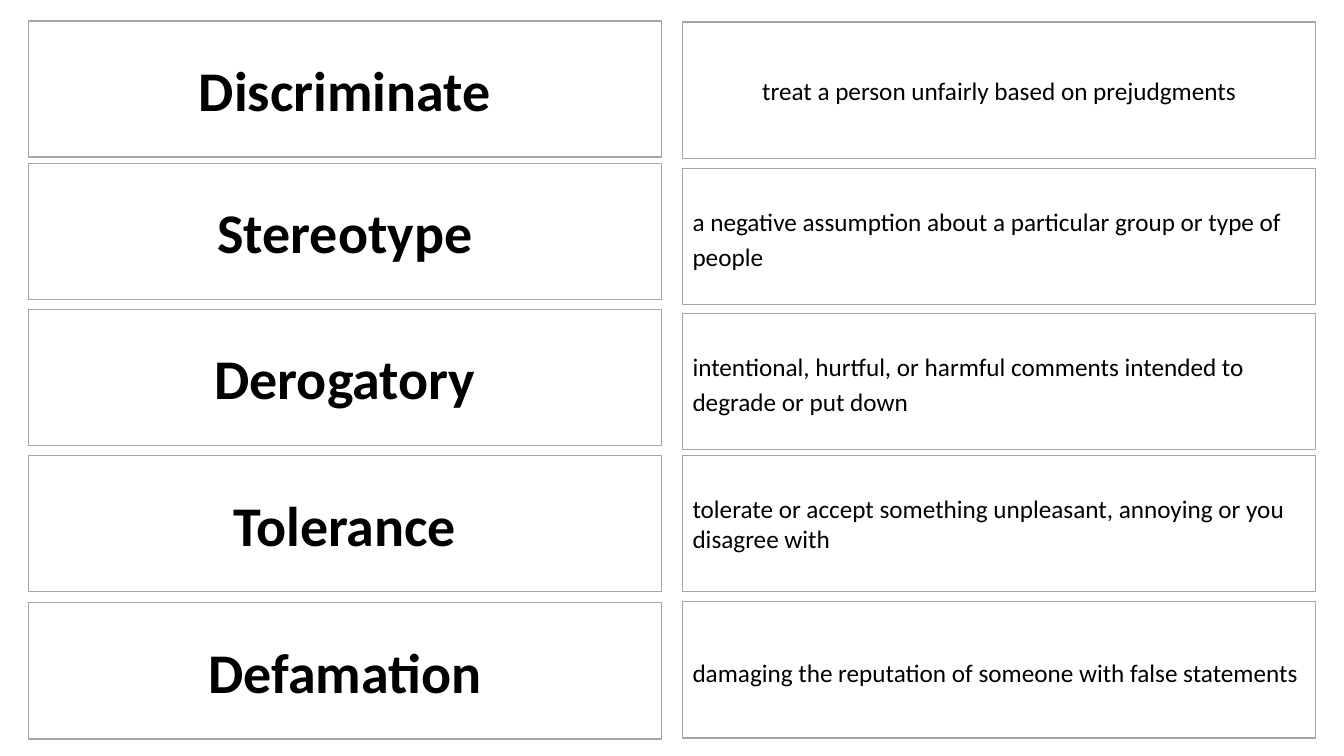
from dataclasses import dataclass

import pptx
import pptx.dml.color
import pptx.enum.shapes
import pptx.enum.text
import pptx.shapes.autoshape
import pptx.slide
import pptx.util

EMU_PER_PX = 9144  # 100 px to the inch
SLIDE_WIDTH, SLIDE_HEIGHT = 1333, 750
CARD_WIDTH, CARD_HEIGHT = 628, 135
TERM_LEFT, DEFINITION_LEFT = 28, 677
FONT_NAME = "Calibri"

CENTER = pptx.enum.text.PP_ALIGN.CENTER
LEFT = pptx.enum.text.PP_ALIGN.LEFT


@dataclass(frozen=True)
class Entry:
    term: str
    term_top: int
    definition: str
    definition_top: int
    definition_align: pptx.enum.text.PP_ALIGN = LEFT
    definition_spacing: float = 1.0


ENTRIES = [
    Entry("Discriminate", 21,
          "treat a person unfairly based on prejudgments", 22,
          definition_align=CENTER),
    Entry("Stereotype", 162,
          "a negative assumption about a particular group or type of people", 167,
          definition_spacing=1.15),
    Entry("Derogatory", 307,
          "intentional, hurtful, or harmful comments intended to degrade or put down", 311,
          definition_spacing=1.15),
    Entry("Tolerance", 452,
          "tolerate or accept something unpleasant, annoying or you disagree with", 452),
    Entry("Defamation", 598,
          "damaging the reputation of someone with false statements", 597,
          definition_spacing=1.15),
]


def px(length: int) -> pptx.util.Emu:
    return pptx.util.Emu(length * EMU_PER_PX)


def color(value: str) -> pptx.dml.color.RGBColor:
    return pptx.dml.color.RGBColor.from_string(value)


def write_text(shape: pptx.shapes.autoshape.Shape, text: str, *, size: int,
               bold: bool = False, align: pptx.enum.text.PP_ALIGN = LEFT,
               spacing: float = 1.0) -> None:
    frame = shape.text_frame
    frame.word_wrap = True
    frame.vertical_anchor = pptx.enum.text.MSO_ANCHOR.MIDDLE
    paragraph = frame.paragraphs[0]
    paragraph.alignment = align
    paragraph.line_spacing = spacing
    run = paragraph.add_run()
    run.text = text
    run.font.name = FONT_NAME
    run.font.size = pptx.util.Pt(size)
    run.font.bold = bold
    run.font.color.rgb = color("000000")


def add_card(slide: pptx.slide.Slide, left: int, top: int) -> pptx.shapes.autoshape.Shape:
    card = slide.shapes.add_shape(
        pptx.enum.shapes.MSO_SHAPE.RECTANGLE,
        px(left), px(top), px(CARD_WIDTH), px(CARD_HEIGHT))
    card.shadow.inherit = False
    card.fill.solid()
    card.fill.fore_color.rgb = color("FFFFFF")
    card.line.color.rgb = color("A5A5A5")
    card.line.width = pptx.util.Pt(1)
    return card


def add_entry(slide: pptx.slide.Slide, entry: Entry) -> None:
    term_card = add_card(slide, TERM_LEFT, entry.term_top)
    write_text(term_card, entry.term, size=40, bold=True, align=CENTER)
    definition_card = add_card(slide, DEFINITION_LEFT, entry.definition_top)
    write_text(definition_card, entry.definition, size=18,
               align=entry.definition_align, spacing=entry.definition_spacing)


def main() -> None:
    presentation = pptx.Presentation()
    presentation.slide_width = px(SLIDE_WIDTH)
    presentation.slide_height = px(SLIDE_HEIGHT)
    slide = presentation.slides.add_slide(presentation.slide_layouts[6])
    for entry in ENTRIES:
        add_entry(slide, entry)
    presentation.save("out.pptx")


if __name__ == "__main__":
    main()
